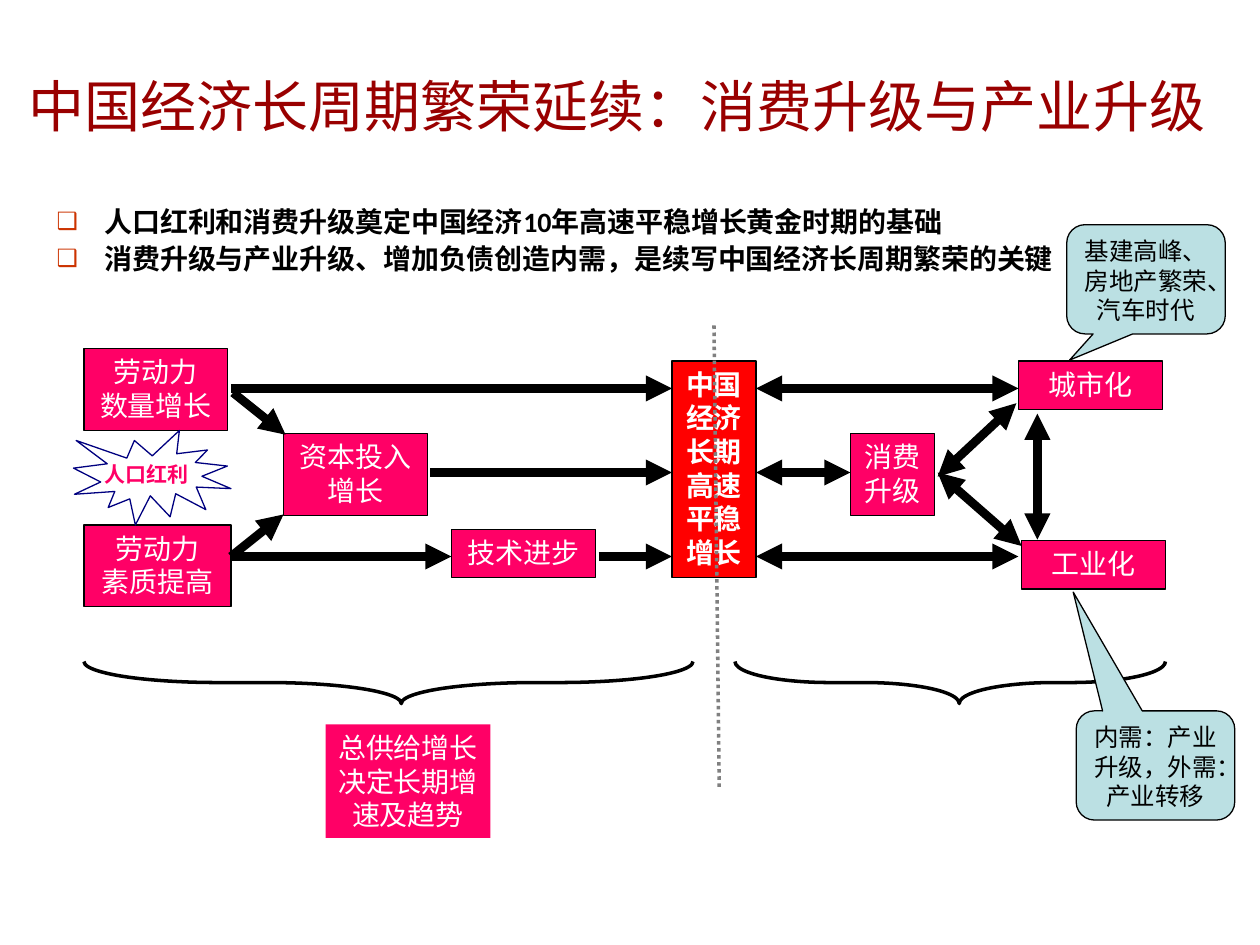
from lxml import etree
from pptx import Presentation
from pptx import util as u
from pptx.dml import color
from pptx.enum import dml, shapes, text
from pptx.oxml import ns

THEME = {
    "pink": "FF0066", "red": "FF0000", "pale": "BBE0E3", "white": "FFFFFF",
    "black": "000000", "grey": "808080", "navy": "000080", "title": "990000",
    "bullet": "CC3300", "body": "Arial", "thin": 0.75, "rule": 2, "arrow": 5,
}
STYLES = {
    "box": {"size": 16, "name": "Arial", "bold": False, "color": "white"},
    "core": {"size": 16, "name": "Arial", "bold": True, "color": "white"},
    "note": {"size": 14, "name": "Arial", "bold": False, "color": "black"},
    "label": {"size": 12, "name": "Arial", "bold": True, "color": "pink"},
    "title": {"size": 32, "name": "Noto Sans CJK SC", "bold": False, "color": "title"},
    "point": {"size": 16, "name": "Calibri", "bold": True, "color": "black"},
}
COLS, ROWS = 120, 90

TITLE = "中国经济长周期繁荣延续：消费升级与产业升级"
POINTS = [
    "人口红利和消费升级奠定中国经济10年高速平稳增长黄金时期的基础",
    "消费升级与产业升级、增加负债创造内需，是续写中国经济长周期繁荣的关键",
]
WIDE, NARROW = 13.7, 8
ONE, TWO, SIX = 4.6, 7.8, 20.6
BOXES = [
    (["劳动力", "数量增长"], (8, 33.2, WIDE, TWO), "pink", "box", "black"),
    (["劳动力", "素质提高"], (8, 50, 14, TWO), "pink", "box", "black"),
    (["资本投入", "增长"], (27, 41.3, WIDE, TWO), "pink", "box", "black"),
    (["技术进步"], (43, 50.4, WIDE, ONE), "pink", "box", "black"),
    (["中国经济长期高速平稳增长"], (64, 34.4, NARROW, SIX), "red", "core", "black"),
    (["消费升级"], (81, 41.3, NARROW, TWO), "pink", "box", "black"),
    (["工业化"], (97.3, 51.5, WIDE, ONE), "pink", "box", "black"),
    (["城市化"], (97, 34.4, WIDE, ONE), "pink", "box", "black"),
    (["总供给增长决定长期增速及趋势"], (31, 69, 15.7, 10.8), "pink", "box", None),
]
TOP, MID, LOW = 37, 45, 53
ONE_WAY = [
    (22.2, 37.4, 27.2, 41.4), (22, LOW, 27, 49), (22, LOW, 43, LOW),
    (22, TOP, 64, TOP), (41, MID, 64, MID), (57, LOW, 64, LOW),
]
TWO_WAY = [
    (89.3, 45.4, 96.8, 38.4), (89.3, MID, 97.3, 52), (98.8, 39.4, 98.8, 51.4),
    (72, MID, 81, MID), (72, TOP, 97, TOP), (72, LOW, 97, LOW),
]
DIVIDER = (68, 31, 68.5, 75.2)
BRACES = [(37, 58, 3.185), (90.5, 41, 2.252)]
BRACE_ROW, BRACE_DEPTH, BRACE_TIP = 65, 4, 0.521
CALLOUTS = [
    ("基建高峰、房地产繁荣、汽车时代", (101.6, 21.4), (-0.482, 0.74, 0.167)),
    ("内需：产业升级，外需：产业转移", (102.5, 67.7), (-0.519, -1.588, 0.167)),
]
CALLOUT_SIZE = (15.1, 10.4)

prs = Presentation()
prs.slide_width, prs.slide_height = u.Inches(10), u.Inches(7.5)
s = prs.slides.add_slide(prs.slide_layouts[6])


def place(cells):
    units = (prs.slide_width / COLS, prs.slide_height / ROWS) * 2
    return [round(c * unit) for c, unit in zip(cells, units)]


def rgb(name):
    return color.RGBColor.from_string(THEME[name])


def sub(parent, tag, **attrs):
    return etree.SubElement(parent, ns.qn(tag), attrs)


def write(sp, lines, style, align="CENTER", **frame):
    tf = sp.text_frame
    options = {"word_wrap": True, "vertical_anchor": text.MSO_ANCHOR.TOP, **frame}
    for key, value in options.items():
        setattr(tf, key, value)
    for i, line in enumerate(lines):
        p = tf.add_paragraph() if i else tf.paragraphs[0]
        p.alignment = getattr(text.PP_ALIGN, align)
        r = p.add_run()
        r.text = line
        for key, value in STYLES[style].items():
            if key == "color":
                r.font.color.rgb = rgb(value)
            else:
                setattr(r.font, key, u.Pt(value) if key == "size" else value)
    return tf


def stroke(line, name, width):
    line.color.rgb, line.width = rgb(name), u.Pt(width)


def draw(kind, cells, fill=None, line="black", width=THEME["thin"], adjust=()):
    sp = s.shapes.add_shape(getattr(shapes.MSO_SHAPE, kind), *place(cells))
    sp.shadow.inherit = False
    if fill:
        sp.fill.solid()
        sp.fill.fore_color.rgb = rgb(fill)
    else:
        sp.fill.background()
    if line:
        stroke(sp.line, line, width)
    else:
        sp.line.fill.background()
    for i, value in enumerate(adjust):
        sp.adjustments[i] = value
    return sp


def connect(cells, name, width, ends=(), dash=None):
    cx = s.shapes.add_connector(shapes.MSO_CONNECTOR.STRAIGHT, *place(cells))
    stroke(cx.line, name, width)
    if dash:
        cx.line.dash_style = dash
    props = cx._element.spPr
    for end in ends:
        sub(props.find(ns.qn("a:ln")), end, type="triangle")
    sub(props, "a:effectLst")


def textbox(cells, *args, **frame):
    return write(s.shapes.add_textbox(*place(cells)), *args, **frame)


FIT = text.MSO_AUTO_SIZE.SHAPE_TO_FIT_TEXT
for lines, cells, fill, style, line in BOXES:
    write(draw("RECTANGLE", cells, fill, line), lines, style, auto_size=FIT)

for routes, ends in ((ONE_WAY, ["a:tailEnd"]), (TWO_WAY, ["a:headEnd", "a:tailEnd"])):
    for route in routes:
        connect(route, "black", THEME["arrow"], ends)
connect(DIVIDER, "grey", THEME["rule"], dash=dml.MSO_LINE.ROUND_DOT)

for centre, span, curve in BRACES:
    frame = (centre - BRACE_DEPTH / 2, BRACE_ROW - span / 2, BRACE_DEPTH, span)
    brace = draw("LEFT_BRACE", frame, width=THEME["rule"], adjust=(curve, BRACE_TIP))
    brace.rotation = 270

draw("EXPLOSION1", (7, 41, 15, 9), line="navy")
textbox((8, 43.4, 12, 3.6), ["人口红利"], "label", auto_size=FIT)
textbox((0, 5.3, 117.6, 9.5), [TITLE], "title", vertical_anchor=text.MSO_ANCHOR.MIDDLE)

tf = textbox((4.2, 18.6, 111.5, 6.6), POINTS, "point", "JUSTIFY")
for p in tf.paragraphs:
    p.line_spacing = 1.1
    pPr = p._p.get_or_add_pPr()
    indent = u.Inches(0.38)
    pPr.set("marL", str(indent))
    pPr.set("indent", str(-indent))
    sub(sub(pPr, "a:buClr"), "a:srgbClr", val=THEME["bullet"])
    sub(pPr, "a:buSzPct", val="85000")
    sub(pPr, "a:buFont", typeface=THEME["body"])
    sub(pPr, "a:buChar", char="❑")

for note, corner, adjust in CALLOUTS:
    sp = draw("ROUNDED_RECTANGULAR_CALLOUT", corner + CALLOUT_SIZE, "pale", adjust=adjust)
    write(sp, [note], "note")

prs.save("out.pptx")
